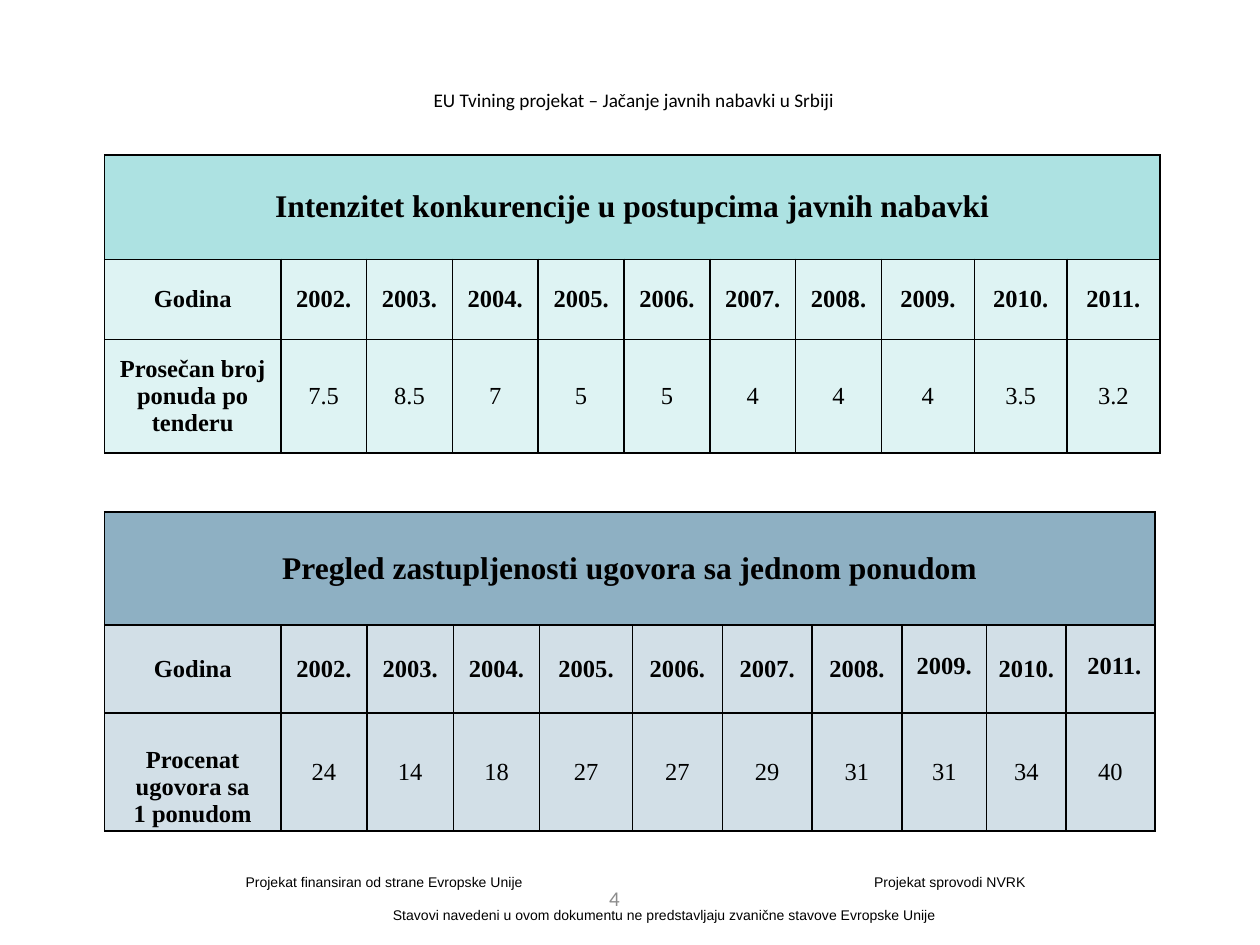
import pptx
import pptx.dml.color
import pptx.enum.text
import pptx.oxml.ns
import pptx.util
from lxml import etree

Cm = pptx.util.Cm
Pt = pptx.util.Pt
RGBColor = pptx.dml.color.RGBColor
Align = pptx.enum.text.PP_ALIGN
Anchor = pptx.enum.text.MSO_ANCHOR
qn = pptx.oxml.ns.qn

BLACK = RGBColor(0x00, 0x00, 0x00)
GRAY = RGBColor(0x8C, 0x8C, 0x8C)
AQUA = RGBColor(0xAD, 0xE2, 0xE2)
PALE_AQUA = RGBColor(0xDE, 0xF3, 0xF3)
STEEL = RGBColor(0x8E, 0xB0, 0xC3)
PALE_STEEL = RGBColor(0xD2, 0xDF, 0xE7)

YEARS = [f"{year}." for year in range(2002, 2012)]


class SlideBuilder:
    title_format = {"name": "Times New Roman", "size": Pt(18), "bold": True}
    label_format = {"name": "Times New Roman", "size": Pt(14), "bold": True}
    value_format = {"name": "Times New Roman", "size": Pt(14), "bold": False}

    def __init__(self, page):
        self.page = page

    def apply(self, target, values):
        for name, value in values.items():
            setattr(target, name, value)

    def add_lines(self, frame, lines, style, color=BLACK, align=Align.CENTER):
        for index, line in enumerate(lines):
            para = frame.add_paragraph() if index else frame.paragraphs[0]
            para.alignment = align
            span = para.add_run()
            span.text = line
            self.apply(span.font, style)
            span.font.color.rgb = color

    def text(self, place, lines, style, color=BLACK, anchor=Anchor.TOP):
        box = self.page.shapes.add_textbox(*(Cm(length) for length in place))
        frame = box.text_frame
        self.apply(frame, {"word_wrap": True, "vertical_anchor": anchor})
        self.add_lines(frame, lines, style, color)
        return frame

    def tab_stop(self, para, position):
        tabs = etree.SubElement(para._p.get_or_add_pPr(), qn("a:tabLst"))
        etree.SubElement(tabs, qn("a:tab"), pos=str(Cm(position)), algn="l")

    def border(self, cell):
        properties = cell._tc.get_or_add_tcPr()
        for index, side in enumerate(("lnL", "lnR", "lnT", "lnB")):
            line = etree.Element(qn(f"a:{side}"), w=str(Pt(1)))
            fill = etree.SubElement(line, qn("a:solidFill"))
            etree.SubElement(fill, qn("a:srgbClr"), val=str(BLACK))
            properties.insert(index, line)

    def cell(self, cell, lines, style, color):
        self.apply(cell, {
            "margin_left": Cm(0.17), "margin_right": Cm(0.17),
            "margin_top": 0, "margin_bottom": 0,
            "vertical_anchor": Anchor.MIDDLE,
        })
        cell.fill.solid()
        cell.fill.fore_color.rgb = color
        self.border(cell)
        self.add_lines(cell.text_frame, lines, style)

    def table(self, left, top, widths, heights, title, label, values, colors):
        shape = self.page.shapes.add_table(
            len(heights), len(widths), Cm(left), Cm(top),
            Cm(sum(widths)), Cm(sum(heights)))
        table = shape.table
        self.apply(table, {"first_row": False, "horz_banding": False})
        for column, width in zip(table.columns, widths):
            column.width = Cm(width)
        for row, height in zip(table.rows, heights):
            row.height = Cm(height)
        table.cell(0, 0).merge(table.cell(0, len(widths) - 1))
        title_color, body_color = colors
        for column in range(len(widths)):
            lines = [] if column else [title]
            self.cell(table.cell(0, column), lines, self.title_format, title_color)
        for column, year in enumerate(["Godina"] + YEARS):
            self.cell(table.cell(1, column), [year], self.label_format, body_color)
        self.cell(table.cell(2, 0), label, self.label_format, body_color)
        for column, value in enumerate(values, 1):
            self.cell(table.cell(2, column), [value], self.value_format, body_color)
        return table


def main():
    deck = pptx.Presentation()
    deck.slide_width, deck.slide_height = Cm(25.4), Cm(19.05)
    builder = SlideBuilder(deck.slides.add_slide(deck.slide_layouts[6]))

    builder.text((1.78, 1.65, 22, 0.71),
                 ["EU Tvining projekat – Jačanje javnih nabavki u Srbiji"],
                 {"name": "Calibri", "size": Pt(11)}, anchor=Anchor.MIDDLE)

    footer = builder.text(
        (4.7, 17.48, 17.4, 1.3),
        ["Projekat finansiran od strane Evropske Unije\tProjekat sprovodi NVRK",
         "Stavovi navedeni u ovom dokumentu ne predstavljaju zvanične stavove Evropske Unije"],
        {"name": "Arial", "size": Pt(8)})
    funding, disclaimer = footer.paragraphs
    funding.alignment = Align.LEFT
    builder.tab_stop(funding, 12.67)
    disclaimer.space_before = Pt(9.6)

    builder.table(
        2.11, 3.12, [3.55] + [1.73] * 7 + [1.87] * 3, [2.11, 1.61, 2.29],
        "Intenzitet konkurencije u postupcima javnih nabavki",
        ["Prosečan broj ponuda po tenderu"],
        ["7.5", "8.5", "7", "5", "5", "4", "4", "4", "3.5", "3.2"],
        (AQUA, PALE_AQUA))

    builder.text((4.09, 17.73, 16.59, 0.74), ["4"],
                 {"name": "Calibri", "size": Pt(12)}, GRAY, Anchor.MIDDLE)

    shares = builder.table(
        2.11, 10.32,
        [3.55] + [1.74] * 3 + [1.87] + [1.81] * 3 + [1.71, 1.6, 1.79],
        [2.28, 1.77, 2.38],
        "Pregled zastupljenosti ugovora sa jednom ponudom",
        ["Procenat ugovora sa", "1 ponudom"],
        ["24", "14", "18", "27", "27", "29", "31", "31", "34", "40"],
        (STEEL, PALE_STEEL))
    builder.apply(shares.cell(2, 0), {"vertical_anchor": Anchor.BOTTOM,
                                      "margin_bottom": Cm(0.06)})
    for column in (8, 10):
        shares.cell(1, column).margin_bottom = Cm(0.12)
    shares.cell(1, 10).margin_left = Cm(0.33)

    deck.save("out.pptx")


if __name__ == "__main__":
    main()
